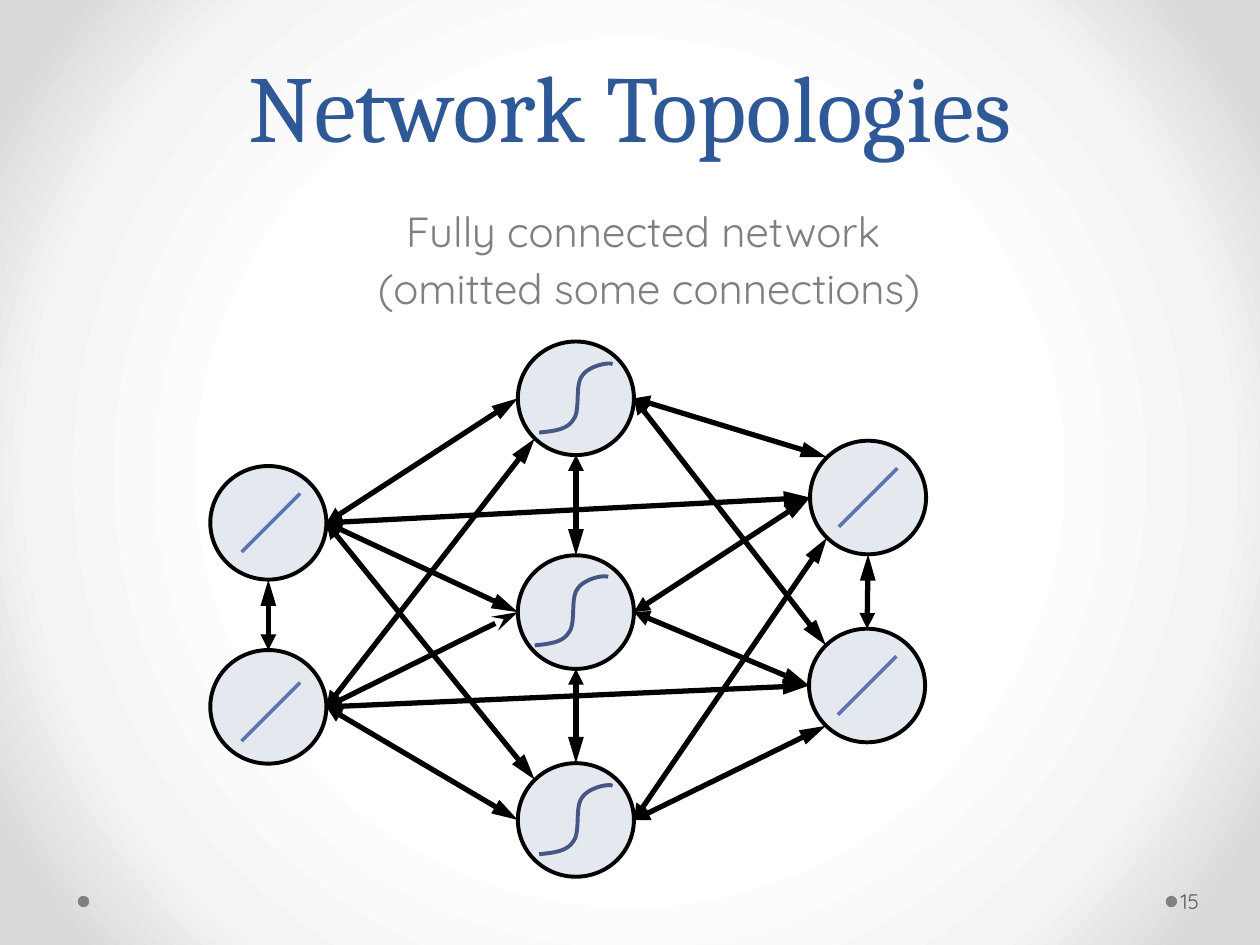
from lxml import etree
from pptx import Presentation
from pptx.dml.color import RGBColor
from pptx.enum.shapes import MSO_CONNECTOR, MSO_SHAPE
from pptx.enum.text import MSO_ANCHOR, PP_ALIGN
from pptx.oxml.ns import qn
from pptx.util import Cm, Pt

OVAL = MSO_SHAPE.OVAL
STRAIGHT = MSO_CONNECTOR.STRAIGHT
CENTER, LEFT = PP_ALIGN.CENTER, PP_ALIGN.LEFT
TOP, MIDDLE, BOTTOM = MSO_ANCHOR.TOP, MSO_ANCHOR.MIDDLE, MSO_ANCHOR.BOTTOM

NODE_W, NODE_H = 2.34, 2.29
DIAG = 0.71
SITES = {"N": (0, -1), "S": (0, 1), "W": (-1, 0), "E": (1, 0),
         "NW": (-DIAG, -DIAG), "SW": (-DIAG, DIAG)}

# name: centre of the node, then shift of the symbol inside it (cm)
LINEAR_NODES = {
    "in1": (5.41, 10.54, 0.05, 0),
    "in2": (5.41, 14.25, 0.05, 0.1),
    "out1": (17.5, 10.03, 0, 0),
    "out2": (17.48, 13.82, 0, 0),
}
SIGMOID_NODES = {
    "hid1": (11.61, 8.03, 0, 0),
    "hid2": (11.61, 12.34, -0.09, -0.02),
    "hid3": (11.61, 16.53, 0, 0),
}
# start, its site, end, its site
LINKS = [
    ("in1", "E", "hid1", "W"), ("in1", "E", "hid2", "W"),
    ("in1", "E", "hid3", "NW"), ("in1", "E", "out1", "W"),
    ("in2", "E", "hid1", "SW"), ("in2", "E", "hid2", "W"),
    ("in2", "E", "hid3", "W"), ("in2", "E", "out2", "W"),
    ("hid1", "E", "out1", "NW"), ("hid1", "E", "out2", "NW"),
    ("hid2", "E", "out1", "W"), ("hid2", "E", "out2", "W"),
    ("hid3", "E", "out1", "SW"), ("hid3", "E", "out2", "SW"),
    ("hid1", "S", "hid2", "N"), ("hid2", "S", "hid3", "N"),
    ("in2", "N", "in1", "S"), ("out2", "N", "out1", "S"),
]
STEALTH_LINK = ("in2", "hid2")
SIGMOID = [
    ((-0.74, 0.69), (-0.46, 0.66), (-0.18, 0.64), (-0.05, 0.43)),
    ((-0.05, 0.43), (0.1, 0.25), (-0.03, -0.28), (0.13, -0.46)),
    ((0.13, -0.46), (0.25, -0.64), (0.64, -0.74), (0.74, -0.69)),
]


def rgb(value):
    return RGBColor.from_string(value)


def bezier(p0, p1, p2, p3, t):
    """Return the point at t on a cubic Bezier curve."""
    u = 1 - t
    return tuple(u**3 * a + 3 * u * u * t * b + 3 * u * t * t * c + t**3 * d
                 for a, b, c, d in zip(p0, p1, p2, p3))


class Deck:
    ink, node_fill, grey = "000000", "E4E9EF", "808080"
    blue, slope, curve = "2F5897", "5C72B2", "475785"
    head_font, body_font = "Cambria", "Quicksand"

    def __init__(self, prs):
        self.s = prs.slides.add_slide(prs.slide_layouts[6])
        self.centres = {}

    def background(self, stops):
        """Fill the slide with a circular gradient of (percent, colour) stops."""
        self.s.background.fill.gradient()
        grad = self.s._element.find(".//" + qn("a:gradFill"))
        for child in list(grad):
            grad.remove(child)
        gs_list = etree.SubElement(grad, qn("a:gsLst"))
        for pos, colour in stops:
            gs = etree.SubElement(gs_list, qn("a:gs"), pos=str(pos * 1000))
            etree.SubElement(gs, qn("a:srgbClr"), val=colour)
        circle = etree.SubElement(grad, qn("a:path"), path="circle")
        etree.SubElement(circle, qn("a:fillToRect"),
                         {side: "50000" for side in "ltrb"})

    def text(self, box, lines, font, para, frame=None):
        """Add a text box; font, para and frame hold attribute values."""
        tf = self.s.shapes.add_textbox(*map(Cm, box)).text_frame
        for name, value in {"word_wrap": True, **(frame or {})}.items():
            setattr(tf, name, value)
        for i, line in enumerate(lines):
            p = tf.add_paragraph() if i else tf.paragraphs[0]
            for name, value in para.items():
                setattr(p, name, value)
            r = p.add_run()
            r.text = line
            for name, value in font.items():
                if name == "color":
                    r.font.color.rgb = rgb(value)
                else:
                    setattr(r.font, name, value)

    def oval(self, x, y, w, h, fill, line=None):
        sp = self.s.shapes.add_shape(OVAL, Cm(x), Cm(y), Cm(w), Cm(h))
        sp.shadow.inherit = False
        sp.fill.solid()
        sp.fill.fore_color.rgb = rgb(fill)
        if line:
            self.stroke(sp, line, 2.25)
        else:
            sp.line.fill.background()

    def stroke(self, sp, colour, width):
        sp.line.color.rgb = rgb(colour)
        sp.line.width = Pt(width)

    def line(self, start, end, colour, width):
        sp = self.s.shapes.add_connector(STRAIGHT, *map(Cm, (*start, *end)))
        self.stroke(sp, colour, width)
        etree.SubElement(sp._element.spPr, qn("a:effectLst"))
        return sp

    def node(self, name, cx, cy):
        self.centres[name] = cx, cy
        self.oval(cx - NODE_W / 2, cy - NODE_H / 2, NODE_W, NODE_H,
                  self.node_fill, self.ink)

    def site(self, name, side):
        """Return the point on the rim of a node."""
        (cx, cy), (dx, dy) = self.centres[name], SITES[side]
        return cx + dx * NODE_W / 2, cy + dy * NODE_H / 2

    def link(self, start, start_side, end, end_side):
        sp = self.line(self.site(start, start_side), self.site(end, end_side),
                       self.ink, 3)
        ln = sp.line._get_or_add_ln()
        stealth = (start, end) == STEALTH_LINK
        if not stealth:
            etree.SubElement(ln, qn("a:headEnd"), type="triangle")
        etree.SubElement(ln, qn("a:tailEnd"), len="lg",
                         type="stealth" if stealth else "triangle")

    def slope_symbol(self, x, y):
        self.line((x - 0.59, y + 0.59), (x + 0.59, y - 0.59), self.slope, 2)

    def sigmoid_symbol(self, x, y, steps=10):
        points = [SIGMOID[0][0]] + [bezier(*seg, i / steps) for seg in SIGMOID
                                    for i in range(1, steps + 1)]
        points = [(Cm(x + dx), Cm(y + dy)) for dx, dy in points]
        fb = self.s.shapes.build_freeform(*points[0])
        fb.add_line_segments(points[1:], close=False)
        sp = fb.convert_to_shape()
        sp.shadow.inherit = False
        sp.fill.background()
        self.stroke(sp, self.curve, 2.25)


def main():
    prs = Presentation()
    prs.slide_width, prs.slide_height = Cm(25.4), Cm(19.05)
    deck = Deck(prs)
    deck.background([(50, "FFFFFF"), (76, "F4F4F4"), (92, "DADADA")])
    for x in (23.5, 1.57):
        deck.oval(x, 18.06, 0.23, 0.23, deck.grey)

    deck.text((1.27, 0, 22.86, 3.38), ["Network Topologies"],
              {"name": deck.head_font, "size": Pt(54), "color": deck.blue},
              {"alignment": CENTER, "line_spacing": Pt(58)},
              {"vertical_anchor": BOTTOM})
    deck.text((1.47, 4.01, 23.22, 2.54),
              ["Fully connected network ", "(omitted some connections)"],
              {"name": deck.body_font, "size": Pt(24), "color": deck.grey},
              {"alignment": CENTER, "space_before": Pt(4)},
              {"vertical_anchor": TOP})
    deck.text((23.72, 17.65, 1.55, 1.02), ["15"],
              {"name": deck.body_font, "size": Pt(12), "color": "595959"},
              {"alignment": LEFT},
              {"vertical_anchor": MIDDLE, "margin_left": Cm(0.08),
               "margin_right": Cm(0.13)})

    for nodes, symbol in ((LINEAR_NODES, deck.slope_symbol),
                          (SIGMOID_NODES, deck.sigmoid_symbol)):
        for name, (cx, cy, dx, dy) in nodes.items():
            deck.node(name, cx, cy)
            symbol(cx + dx, cy + dy)
    for link in LINKS:
        deck.link(*link)
    prs.save("out.pptx")


if __name__ == "__main__":
    main()
